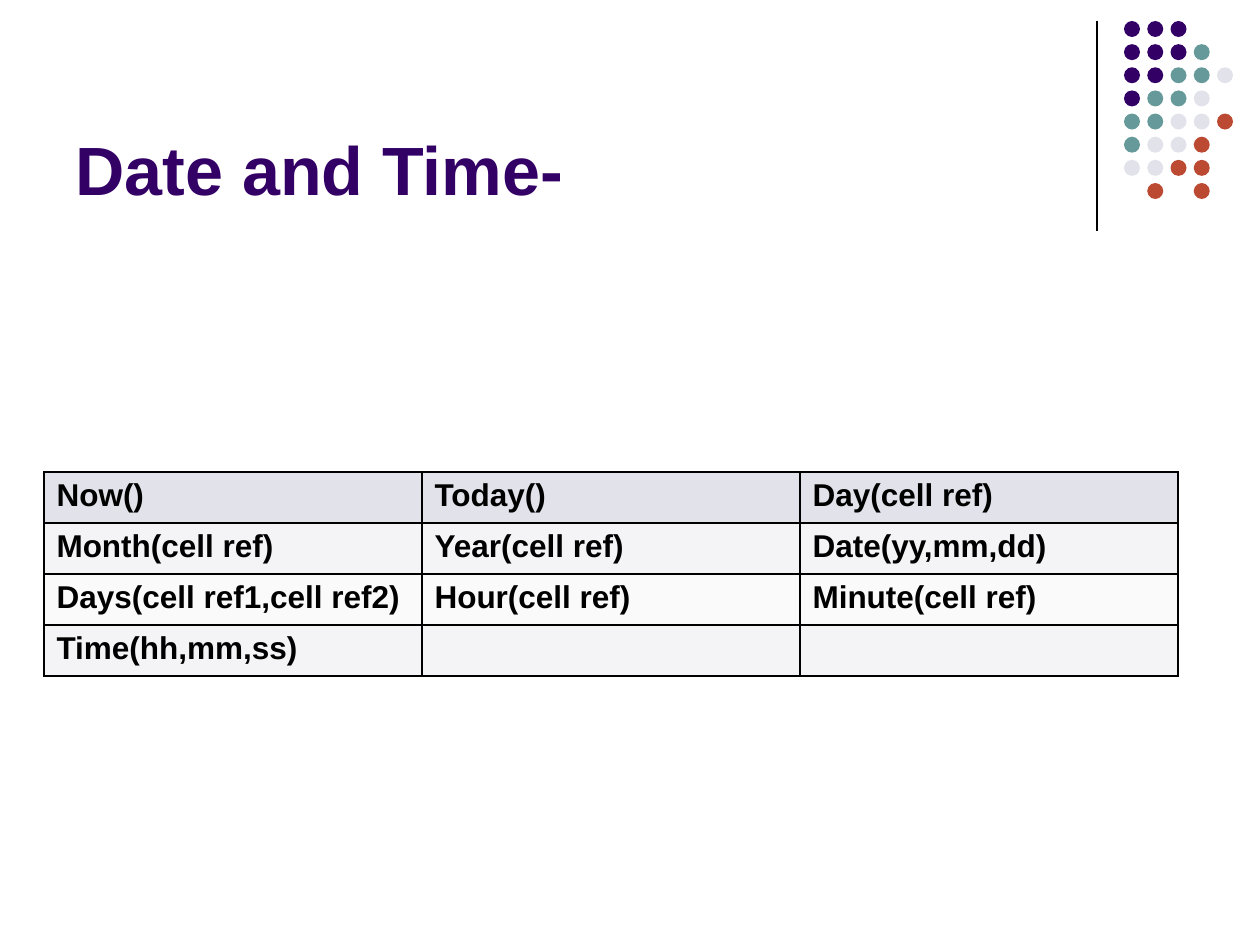
from lxml import etree
from pptx import Presentation
from pptx.dml.color import RGBColor
from pptx.enum.shapes import MSO_CONNECTOR, MSO_SHAPE
from pptx.enum.text import MSO_ANCHOR
from pptx.oxml.ns import qn
from pptx.util import Pt

STRAIGHT = MSO_CONNECTOR.STRAIGHT
OVAL = MSO_SHAPE.OVAL
BOTTOM = MSO_ANCHOR.BOTTOM
SCALE = 914400 / 126
FONT = "Arial"
COLORS = {
    "purple": "330066", "teal": "669999", "mist": "E2E3EA", "rust": "BC4932",
    "ink": "000000", "paper": "FFFFFF", "band": "F4F4F7", "pale": "FAFAFB",
}
DOT_COLORS = {"P": "purple", "T": "teal", "M": "mist", "R": "rust"}
DOT_ROWS = ["PPP", "PPPT", "PPTTM", "PTTM", "TTMMR", "TMMR", "MMRR", " R R"]
FUNCTIONS = [
    ("mist", ["Now()", "Today()", "Day(cell ref)"]),
    ("band", ["Month(cell ref)", "Year(cell ref)", "Date(yy,mm,dd)"]),
    ("pale", ["Days(cell ref1,cell ref2)", "Hour(cell ref)", "Minute(cell ref)"]),
    ("band", ["Time(hh,mm,ss)", "", ""]),
]


def px(length):
    """Turn pixels into EMU."""
    return round(length * SCALE)


def color(name):
    """Look up a named colour."""
    return RGBColor.from_string(COLORS[name])


def add_span(para, text, size, ink):
    """Add one bold run to a paragraph."""
    span = para.add_run()
    span.text = text
    span.font.name = FONT
    span.font.size = Pt(size)
    span.font.bold = True
    span.font.color.rgb = color(ink)


def add_rule(page, left, top, height):
    """Draw the thin vertical line beside the dots."""
    rule = page.shapes.add_connector(
        STRAIGHT, px(left), px(top), px(left), px(top + height))
    rule.line.color.rgb = color("ink")
    rule.line.width = Pt(0.75)
    etree.SubElement(rule.element.spPr, qn("a:effectLst"))


def add_dots(page, left, top, width, height, size=16):
    """Spread the coloured dots evenly over a box."""
    group = page.shapes.add_group_shape()
    across = (width - size) / (max(map(len, DOT_ROWS)) - 1)
    down = (height - size) / (len(DOT_ROWS) - 1)
    for row, keys in enumerate(DOT_ROWS):
        for column, key in enumerate(keys):
            if key in DOT_COLORS:
                dot = group.shapes.add_shape(
                    OVAL, px(left + column * across), px(top + row * down),
                    px(size), px(size))
                dot.shadow.inherit = False
                dot.fill.solid()
                dot.fill.fore_color.rgb = color(DOT_COLORS[key])
                dot.line.fill.background()


def add_title(page, left, top, width, height):
    """Place the title one line above the foot of its box."""
    box = page.shapes.add_textbox(px(left), px(top), px(width), px(height))
    frame = box.text_frame
    frame.word_wrap = True
    frame.vertical_anchor = BOTTOM
    frame.margin_bottom = px(84)
    add_span(frame.paragraphs[0], "Date and Time-", 39, "purple")


def add_borders(cell):
    """Give a cell a black line on every side, ahead of its fill."""
    properties = cell._tc.get_or_add_tcPr()
    for place, side in enumerate(("lnL", "lnR", "lnT", "lnB")):
        edge = etree.Element(qn(f"a:{side}"), w=str(Pt(1)))
        fill = etree.SubElement(edge, qn("a:solidFill"))
        etree.SubElement(fill, qn("a:srgbClr"), val=COLORS["ink"])
        properties.insert(place, edge)


def add_function_table(page, left, top, width, height):
    """Lay out the date and time functions in equal cells."""
    rows, columns = len(FUNCTIONS), len(FUNCTIONS[0][1])
    table = page.shapes.add_table(
        rows, columns, px(left), px(top), px(width), px(height)).table
    for row, (fill, names) in enumerate(FUNCTIONS):
        for column, name in enumerate(names):
            cell = table.cell(row, column)
            cell.fill.solid()
            cell.fill.fore_color.rgb = color(fill)
            add_borders(cell)
            if name:
                add_span(cell.text_frame.paragraphs[0], name, 18, "ink")


def main():
    """Build the deck and save it."""
    deck = Presentation()
    deck.slide_width, deck.slide_height = px(1260), px(945)
    page = deck.slides.add_slide(deck.slide_layouts[6])
    page.background.fill.solid()
    page.background.fill.fore_color.rgb = color("paper")
    add_rule(page, 1097, 21, 210)
    add_dots(page, 1124, 21, 109, 178)
    add_title(page, 63, 16, 1040, 277)
    add_function_table(page, 44, 472, 1134, 204)
    deck.save("out.pptx")


if __name__ == "__main__":
    main()
